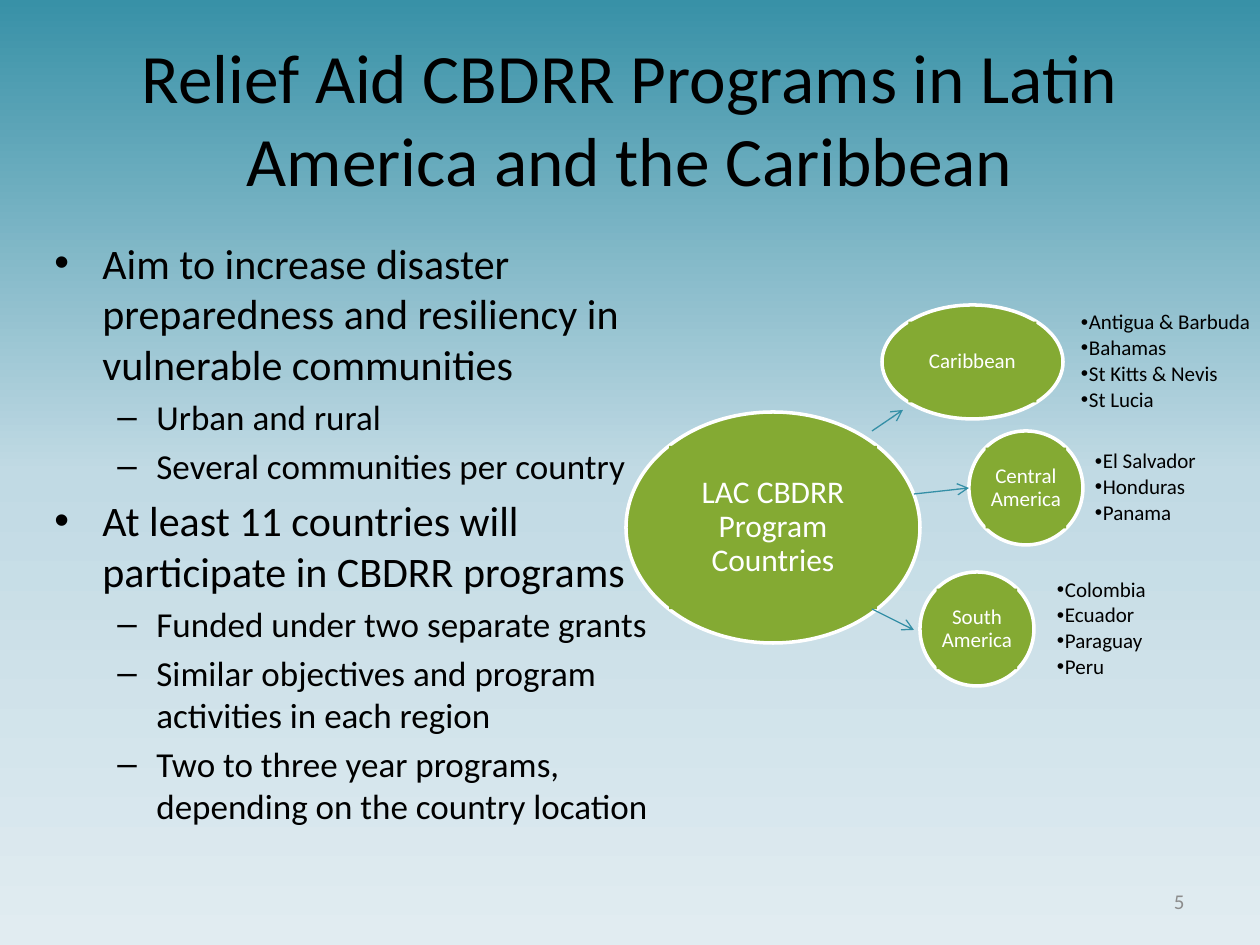
from copy import deepcopy

from lxml.etree import SubElement
from pptx import Presentation
from pptx.dml.color import RGBColor
from pptx.enum.shapes import MSO_CONNECTOR, MSO_SHAPE
from pptx.enum.text import MSO_ANCHOR, PP_ALIGN
from pptx.oxml.ns import qn
from pptx.util import Pt

PX = 914400 // 126
FONT = "Calibri"
BLACK = RGBColor(0x00, 0x00, 0x00)
WHITE = RGBColor(0xFF, 0xFF, 0xFF)
GRAY = RGBColor(0x8C, 0x8C, 0x8C)
GREEN = RGBColor(0x84, 0xAA, 0x33)
TEAL = RGBColor(0x34, 0x8F, 0xA6)
SKY = [
    (0, RGBColor(0x38, 0x91, 0xA7)),
    (0.5, RGBColor(0xC1, 0xDA, 0xE4)),
    (1, RGBColor(0xE1, 0xEC, 0xF1)),
]

TITLE = "Relief Aid CBDRR Programs in Latin America and the Caribbean"
# (level, text)
POINTS = [
    (0, "Aim to increase disaster preparedness and resiliency in vulnerable communities"),
    (1, "Urban and rural"),
    (1, "Several communities per country"),
    (0, "At least 11 countries will participate in CBDRR programs"),
    (1, "Funded under two separate grants"),
    (1, "Similar objectives and program activities in each region"),
    (1, "Two to three year programs, depending on the country location"),
]
# Bullet, left margin, hanging indent, text size for each level
LEVELS = [("•", 48, 48, 24), ("–", 102, 39, 20)]

HUB = ("LAC CBDRR Program Countries", (626, 412, 294, 231))
# Region, oval box, list left, list width, countries
REGIONS = [
    ("Caribbean", (882, 305, 181, 114), 1081, 179,
     ["Antigua & Barbuda", "Bahamas", "St Kitts & Nevis", "St Lucia"]),
    ("Central America", (969, 431, 114, 114), 1095, 165,
     ["El Salvador", "Honduras", "Panama"]),
    ("South America", (920, 572, 114, 114), 1057, 171,
     ["Colombia", "Ecuador", "Paraguay", "Peru"]),
]
ARROWS = [
    (872, 431, 903, 410),
    (914, 494, 969, 488),
    (872, 609, 914, 630),
]


def scale(box):
    return [round(n * PX) for n in box]


def apply(target, style):
    for name, value in style.items():
        setattr(target, name, value)


def pad(frame, size):
    for side in ("left", "right", "top", "bottom"):
        setattr(frame, f"margin_{side}", size * PX)


def write(para, text, size, color, **style):
    run = para.add_run()
    run.text = text
    apply(run.font, {"name": FONT, "size": Pt(size)})
    run.font.color.rgb = color
    apply(para, style)


def mark(para, char, left, hang):
    """Give a paragraph a bullet and a hanging indent."""
    props = para._p.get_or_add_pPr()
    props.set("marL", str(left * PX))
    props.set("indent", str(-hang * PX))
    SubElement(props, qn("a:buFont"), typeface="Arial")
    SubElement(props, qn("a:buChar"), char=char)


def rows(frame, items):
    """Pair each item with its own paragraph."""
    for i, item in enumerate(items):
        yield (frame.add_paragraph() if i else frame.paragraphs[0]), item


def add_frame(slide, box, anchor):
    frame = slide.shapes.add_textbox(*scale(box)).text_frame
    apply(frame, {"word_wrap": True, "vertical_anchor": anchor})
    return frame


def add_sky(slide):
    fill = slide.background.fill
    fill.gradient()
    fill.gradient_angle = 270
    stops = slide.element.find(".//" + qn("a:gsLst"))
    stops.append(deepcopy(stops[0]))
    for stop, (place, color) in zip(fill.gradient_stops, SKY):
        stop.position = place
        stop.color.rgb = color


def add_title(slide, box):
    title = slide.shapes.title
    apply(title, dict(zip(("left", "top", "width", "height"), scale(box))))
    frame = title.text_frame
    apply(frame, {"word_wrap": True, "vertical_anchor": MSO_ANCHOR.MIDDLE})
    write(frame.paragraphs[0], TITLE, 39.6, BLACK, alignment=PP_ALIGN.CENTER)


def add_points(slide, box):
    frame = add_frame(slide, box, MSO_ANCHOR.TOP)
    for para, (level, text) in rows(frame, POINTS):
        char, left, hang, size = LEVELS[level]
        write(para, text, size, BLACK, level=level, space_before=Pt(size * 0.2))
        mark(para, char, left, hang)


def add_shape(slide, kind, box):
    shape = slide.shapes.add_shape(kind, *scale(box))
    shape.shadow.inherit = False
    shape.fill.solid()
    shape.fill.fore_color.rgb = GREEN
    return shape


def add_oval(slide, box, text, size):
    """Draw an oval with its label on the rectangle inscribed in it."""
    oval = add_shape(slide, MSO_SHAPE.OVAL, box)
    oval.line.color.rgb = WHITE
    oval.line.width = Pt(2)

    x, y, w, h = box
    k = 0.5 ** 0.5
    inner = (x + w * (1 - k) / 2, y + h * (1 - k) / 2, w * k, h * k)
    label = add_shape(slide, MSO_SHAPE.RECTANGLE, inner)
    label.line.fill.background()
    frame = label.text_frame
    apply(frame, {"word_wrap": True, "vertical_anchor": MSO_ANCHOR.MIDDLE})
    pad(frame, 1)
    write(frame.paragraphs[0], text, size, WHITE,
          alignment=PP_ALIGN.CENTER, line_spacing=0.9)


def add_list(slide, box, names):
    frame = add_frame(slide, box, MSO_ANCHOR.MIDDLE)
    pad(frame, 0)
    for para, name in rows(frame, names):
        write(para, name, 12, BLACK, level=1, line_spacing=0.9, space_after=Pt(1.8))
        mark(para, "•", 8, 8)


def add_arrow(slide, ends):
    arrow = slide.shapes.add_connector(MSO_CONNECTOR.STRAIGHT, *scale(ends))
    arrow.line.color.rgb = TEAL
    arrow.line.width = Pt(0.75)
    SubElement(arrow.line._get_or_add_ln(), qn("a:tailEnd"), type="arrow")
    SubElement(arrow._element.spPr, qn("a:effectLst"))


def add_map(slide):
    """Draw the hub, its regions and the arrows between them."""
    for name, box, left, width, names in REGIONS:
        add_oval(slide, box, name, 12)
        add_list(slide, (left, box[1], width, box[3]), names)
    add_oval(slide, HUB[1], HUB[0], 18)
    for ends in ARROWS:
        add_arrow(slide, ends)


def add_number(slide, box):
    frame = add_frame(slide, box, MSO_ANCHOR.MIDDLE)
    write(frame.paragraphs[0], "5", 12, GRAY, alignment=PP_ALIGN.RIGHT)


def main():
    deck = Presentation()
    deck.slide_width, deck.slide_height = 1260 * PX, 945 * PX
    slide = deck.slides.add_slide(deck.slide_layouts[5])
    add_sky(slide)
    add_number(slide, (903, 876, 294, 50))
    add_title(slide, (63, 38, 1134, 158))
    add_points(slide, (42, 231, 640, 624))
    add_map(slide)
    deck.save("out.pptx")


if __name__ == "__main__":
    main()
